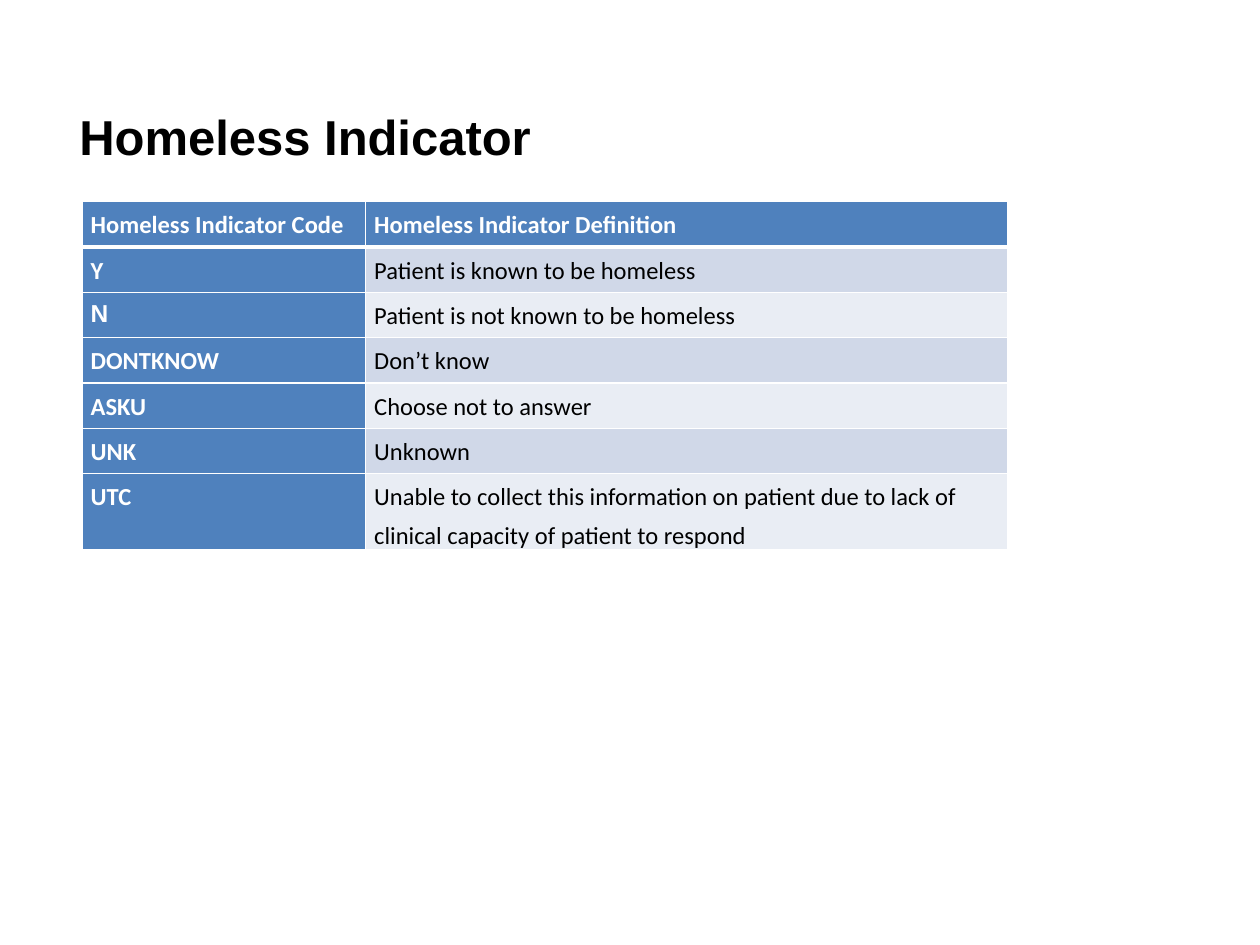
from lxml import etree
from pptx import Presentation
from pptx.dml.color import RGBColor
from pptx.enum.text import MSO_ANCHOR
from pptx.oxml.ns import qn
from pptx.util import Inches, Pt

BOTTOM = MSO_ANCHOR.BOTTOM
BLUE, WHITE, BLACK = "4F81BD", "FFFFFF", "000000"
BANDS = ["E9EDF4", "D0D8E8"]
ROWS = [
    ("Homeless Indicator Code", "Homeless Indicator Definition"),
    ("Y", "Patient is known to be homeless"),
    ("N", "Patient is not known to be homeless"),
    ("DONTKNOW", "Don’t know"),
    ("ASKU", "Choose not to answer"),
    ("UNK", "Unknown"),
    ("UTC", "Unable to collect this information on patient due to lack of "
            "clinical capacity of patient to respond"),
]


def style(par, name, size, color, bold):
    font = par.font
    font.name, font.size, font.bold = name, Pt(size), bold
    font.color.rgb = RGBColor.from_string(color)


def border(cell, base):
    """Draw white 1 pt cell edges, with the bottom edge base points wide."""
    props = cell._tc.get_or_add_tcPr()
    for i, (side, width) in enumerate(zip("LRTB", (1, 1, 1, base))):
        line = etree.Element(qn(f"a:ln{side}"), w=str(Pt(width)))
        fill = etree.SubElement(line, qn("a:solidFill"))
        etree.SubElement(fill, qn("a:srgbClr"), val=WHITE)
        props.insert(i, line)


deck = Presentation()
deck.slide_width, deck.slide_height = Inches(10), Inches(7.5)
slide = deck.slides.add_slide(deck.slide_layouts[6])

title = slide.shapes.add_textbox(
    Inches(0.25), Inches(0.38), Inches(8.79), Inches(0.98)).text_frame
title.word_wrap = True
title.vertical_anchor = BOTTOM
title.margin_left = Inches(0.38)
title.text = "Homeless Indicator"
style(title.paragraphs[0], "Arial", 28, BLACK, True)

table = slide.shapes.add_table(
    len(ROWS), 2, Inches(0.65), Inches(1.6), Inches(7.35), Inches(2.5)).table
table.columns[0].width = Inches(2.25)
table.columns[1].width = Inches(5.1)

for r, row in enumerate(ROWS):
    table.rows[r].height = Inches(0.36)
    for c, text in enumerate(row):
        cell = table.cell(r, c)
        head = r == 0 or c == 0
        cell.margin_left = cell.margin_right = Inches(0.07)
        cell.margin_top = cell.margin_bottom = 0
        cell.fill.solid()
        cell.fill.fore_color.rgb = RGBColor.from_string(
            BLUE if head else BANDS[r % 2])
        border(cell, 3 if r == 0 else 1)
        cell.text = text
        par = cell.text_frame.paragraphs[0]
        par.line_spacing = 1.3
        par.space_after = Pt(3)
        style(par, "Arial" if text == "N" else "Calibri", 14,
              WHITE if head else BLACK, head)

deck.save("out.pptx")
